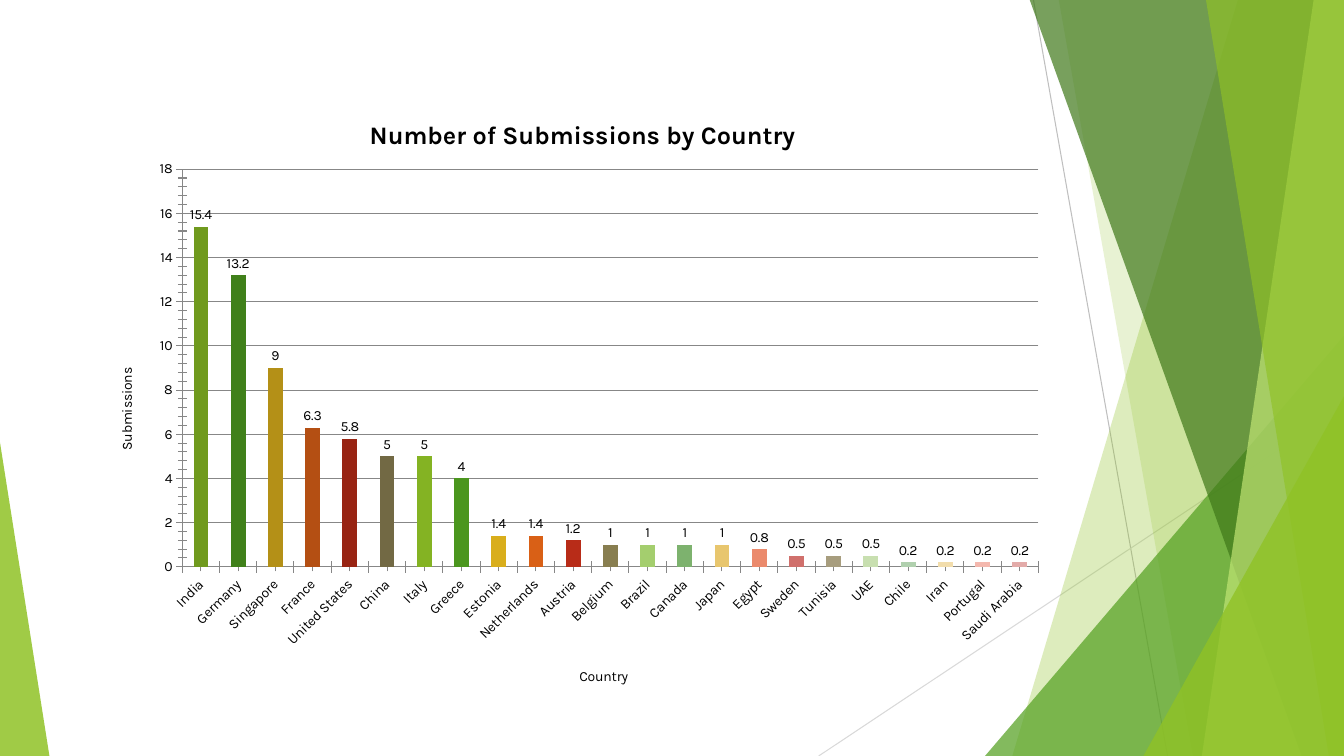
from lxml.etree import SubElement
from pptx import Presentation
from pptx.chart.data import CategoryChartData
from pptx.dml.color import RGBColor
from pptx.enum.chart import XL_CHART_TYPE, XL_LABEL_POSITION, XL_TICK_MARK
from pptx.enum.shapes import MSO_CONNECTOR, MSO_SHAPE
from pptx.oxml import parse_xml
from pptx.oxml.ns import nsdecls, qn
from pptx.util import Inches, Pt


def color(hex_string):
    return RGBColor.from_string(hex_string)


def place(element, index, **fractions):
    """Give a chart part a manual layout, as fractions of the chart."""
    for layout in element.findall(qn("c:layout")):
        element.remove(layout)
    layout = parse_xml(f'<c:layout {nsdecls("c")}><c:manualLayout/></c:layout>')
    element.insert(index, layout)
    if "w" in fractions:
        SubElement(layout[0], qn("c:layoutTarget")).set("val", "inner")
    for name in ("xMode", "yMode"):
        SubElement(layout[0], qn(f"c:{name}")).set("val", "edge")
    for name, value in fractions.items():
        SubElement(layout[0], qn(f"c:{name}")).set("val", str(value))


presentation = Presentation()
presentation.slide_width = Inches(13.33)
presentation.slide_height = Inches(7.5)
slide = presentation.slides.add_slide(presentation.slide_layouts[6])

# Thin lines behind the facets
for x1, y1, x2, y2, line_color in [
    (10.25, 0, 11.58, 7.5, "BFBFBF"),
    (13.33, 4.03, 8.12, 7.5, "D9D9D9"),
]:
    connector = slide.shapes.add_connector(
        MSO_CONNECTOR.STRAIGHT, Inches(x1), Inches(y1), Inches(x2), Inches(y2))
    connector.line.color.rgb = color(line_color)
    connector.line.width = Pt(0.75)
    SubElement(connector.element.spPr, qn("a:effectLst"))

# Green facets, back to front
# Bands: top left x, bottom left x; triangles: left, top, width, apex
facets = [
    ("band", (12.28, 10.04), "90C226", 30),
    ("band", (10.5, 11.83), "90C226", 20),
    ("triangle", (9.77, 3.33, 3.56, 1), "54A021", 72),
    ("band", (10.21, 12.91), "3F7819", 70),
    ("band", (13.03, 11.92), "C0E474", 70),
    ("band", (11.96, 13.18), "90C226", 65),
    ("triangle", (11.34, 3.93, 1.99, 1), "90C226", 80),
    ("triangle", (0, 4.39, 0.49, 0), "90C226", 85),
]
for kind, geometry, fill_color, opacity in facets:
    if kind == "band":
        top_x, bottom_x = geometry
        builder = slide.shapes.build_freeform(Inches(top_x), Inches(-0.01))
        builder.add_line_segments([
            (Inches(x), Inches(y))
            for x, y in [(13.33, -0.01), (13.33, 7.5), (bottom_x, 7.5)]])
        shape = builder.convert_to_shape()
    else:
        left, top, width, apex = geometry
        shape = slide.shapes.add_shape(
            MSO_SHAPE.ISOSCELES_TRIANGLE,
            Inches(left), Inches(top), Inches(width), Inches(7.5 - top))
        shape.adjustments[0] = apex
    shape.shadow.inherit = False
    shape.line.fill.background()
    shape.fill.solid()
    shape.fill.fore_color.rgb = color(fill_color)
    fill = shape.element.spPr.find(qn("a:solidFill"))
    SubElement(fill[0], qn("a:alpha")).set("val", str(opacity * 1000))

# Chart data: country, submissions, bar colour
submissions = [
    ("India", 15.4, "709A1E"), ("Germany", 13.2, "40801A"),
    ("Singapore", 9, "B49017"), ("France", 6.3, "B44F13"),
    ("United States", 5.8, "982413"), ("China", 5, "726944"),
    ("Italy", 5, "84B323"), ("Greece", 4, "4B961E"),
    ("Estonia", 1.4, "D9AE1C"), ("Netherlands", 1.4, "D96016"),
    ("Austria", 1.2, "B82C18"), ("Belgium", 1, "887E50"),
    ("Brazil", 1, "A4CE6E"), ("Canada", 1, "7DB26E"),
    ("Japan", 1, "E8C66E"), ("Egypt", 0.8, "EB8A6C"),
    ("Sweden", 0.5, "D0706C"), ("Tunisia", 0.5, "A79D7E"),
    ("UAE", 0.5, "C8DFB0"), ("Chile", 0.2, "B0D0AE"),
    ("Iran", 0.2, "F2DDAC"), ("Portugal", 0.2, "F4B8AE"),
    ("Saudi Arabia", 0.2, "E3ABA9"),
]
chart_data = CategoryChartData()
chart_data.categories = [country for country, _, _ in submissions]
chart_data.add_series("Series 1", [count for _, count, _ in submissions])
chart = slide.shapes.add_chart(
    XL_CHART_TYPE.COLUMN_CLUSTERED,
    Inches(0.95), Inches(0.89), Inches(9.54), Inches(6.07), chart_data).chart
chart.has_legend = False
chart.font.name = "Karla"
chart.font.size = Pt(10)
chart.font.color.rgb = color("000000")
plot_area = chart.element.find(".//" + qn("c:plotArea"))
place(plot_area, 0, x=0.09, y=0.13, w=0.89, h=0.65)

# Bars and their labels
plot = chart.plots[0]
plot.gap_width = 150
plot.overlap = 100
plot.vary_by_categories = False
for index, (_, _, bar_color) in enumerate(submissions):
    bar_fill = plot.series[0].points[index].format.fill
    bar_fill.solid()
    bar_fill.fore_color.rgb = color(bar_color)
plot.has_data_labels = True
plot.data_labels.show_value = True
plot.data_labels.position = XL_LABEL_POSITION.OUTSIDE_END

# Axes
country_axis, count_axis = chart.category_axis, chart.value_axis
for axis in (country_axis, count_axis):
    axis.major_tick_mark = XL_TICK_MARK.CROSS
    axis.minor_tick_mark = XL_TICK_MARK.CROSS
count_axis.minimum_scale, count_axis.maximum_scale = 0, 18
count_axis.major_unit, count_axis.minor_unit = 2, 0.4
count_axis.has_major_gridlines = True
for line in (country_axis.format.line, count_axis.format.line,
             count_axis.major_gridlines.format.line):
    line.color.rgb = color("878787")
    line.width = Pt(0.75)
country_axis.tick_labels.font.size = Pt(10)
country_labels = plot_area.find(qn("c:catAx")).find(qn("c:txPr"))
country_labels.find(qn("a:bodyPr")).set("rot", "-2700000")

# Titles
for title, text, size, bold, x, y in [
    (chart.chart_title, "Number of Submissions by Country", 18, True, 0.28, 0.04),
    (country_axis.axis_title, "Country", 10, False, 0.5, 0.94),
    (count_axis.axis_title, "Submissions", 10, False, 0.02, 0.45),
]:
    run = title.text_frame.paragraphs[0].add_run()
    run.text = text
    run.font.name = "Karla"
    run.font.size = Pt(size)
    run.font.bold = bold
    run.font.color.rgb = color("000000")
    place(title.element, 1, x=x, y=y)
count_title = count_axis.axis_title.element
count_title.find(".//" + qn("a:bodyPr")).set("rot", "-5400000")

presentation.save("out.pptx")
